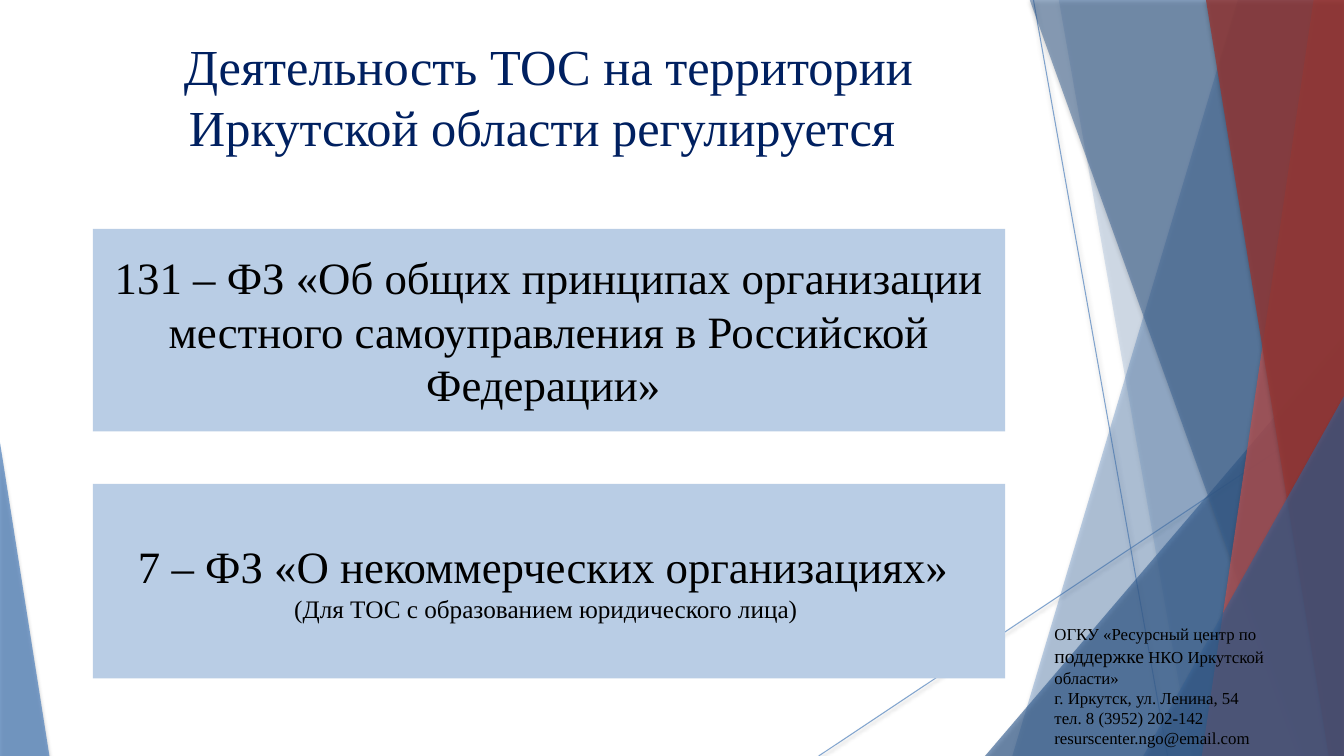
from dataclasses import dataclass

from lxml import etree
from pptx import Presentation
from pptx import util as u
from pptx.dml.color import RGBColor
from pptx.enum import shapes, text
from pptx.oxml import ns

PX = 9144  # EMU in one px, 100 px to the inch
WIDTH, HEIGHT = 1333, 750
TOP = -1


@dataclass(frozen=True)
class Theme:
    font: str = "Times New Roman"
    blue: str = "4F81BD"
    dark_blue: str = "376092"
    red: str = "C0504D"
    dark_red: str = "953735"
    panel: str = "B9CDE5"
    title: str = "002060"
    ink: str = "000000"
    title_size: int = 36
    law_size: int = 32
    note_size: int = 18
    accent_size: int = 14
    contact_size: int = 12


@dataclass(frozen=True)
class Shadow:
    blur: float
    distance: float
    alpha: int


@dataclass(frozen=True)
class Ray:
    start: tuple[int, int]
    end: tuple[int, int]


@dataclass(frozen=True)
class Facet:
    """A band from the top edge (or its right corner) down to the bottom edge."""
    top_left: int
    bottom_left: int
    color: str
    alpha: int


@dataclass(frozen=True)
class Corner:
    """A right triangle standing in a bottom corner; apex is 0 (left) or 1 (right)."""
    left: int
    top: int
    width: int
    apex: int
    color: str
    alpha: int


@dataclass(frozen=True)
class Run:
    text: str
    size: int


@dataclass(frozen=True)
class Panel:
    top: int
    height: int
    lines: list[list[Run]]


T = Theme()
RAY_SHADOW = Shadow(3.1, 1.6, 38)
FACET_SHADOW = Shadow(3, 2, 35)
RAYS = [Ray((1025, 0), (1158, 750)), Ray((1333, 403), (812, 750))]
FACETS = [
    Facet(1228, 1004, T.blue, 36),
    Facet(1050, 1182, T.blue, 20),
    Corner(977, 333, 356, 1, T.dark_blue, 66),
    Facet(1021, 1291, T.dark_blue, 50),
    Facet(1303, 1192, T.red, 70),
    Facet(1196, 1318, T.dark_red, 80),
    Corner(1134, 393, 199, 1, T.dark_blue, 66),
    Corner(0, 439, 49, 0, T.blue, 70),
]
TITLE = [[Run("Деятельность ТОС на территории Иркутской области регулируется ", T.title_size)]]
PANELS = [
    Panel(227, 201, [[Run("131 – ФЗ «Об общих принципах организации местного "
                          "самоуправления в Российской Федерации» ", T.law_size)]]),
    Panel(480, 193, [[Run("7 – ФЗ «О некоммерческих организациях» ", T.law_size)],
                     [Run("(Для ТОС с образованием юридического лица) ", T.note_size)]]),
]
CONTACTS = [
    [Run("ОГКУ «Ресурсный центр по ", T.contact_size),
     Run("поддержке", T.accent_size),
     Run(" НКО Иркутской области»", T.contact_size)],
    [Run("г. Иркутск, ул. Ленина, 54", T.contact_size)],
    [Run("тел. 8 (3952) 202-142", T.contact_size)],
    [Run("resurscenter.ngo@email.com", T.contact_size)],
]


def px(*values: int) -> list[int]:
    return [v * PX for v in values]


def set_effects(sp, alpha: int, shadow: Shadow) -> None:
    """Make the colours already set translucent, then add a shadow cast downwards."""
    props = sp._element.spPr
    for color in props.iter(ns.qn("a:srgbClr")):
        etree.SubElement(color, ns.qn("a:alpha"), val=str(alpha * 1000))
    effects = props.find(ns.qn("a:effectLst"))
    if effects is None:
        effects = etree.SubElement(props, ns.qn("a:effectLst"))
    outer = etree.SubElement(
        effects, ns.qn("a:outerShdw"), blurRad=str(int(u.Pt(shadow.blur))),
        dist=str(int(u.Pt(shadow.distance))), dir="5400000", rotWithShape="0")
    color = etree.SubElement(outer, ns.qn("a:srgbClr"), val=T.ink)
    etree.SubElement(color, ns.qn("a:alpha"), val=str(shadow.alpha * 1000))


def set_fill(sp, color: str) -> None:
    sp.shadow.inherit = False
    sp.fill.solid()
    sp.fill.fore_color.rgb = RGBColor.from_string(color)
    sp.line.fill.background()


def write(sp, lines: list[list[Run]], *, color: str = T.ink,
          align=text.PP_ALIGN.CENTER, anchor=text.MSO_ANCHOR.TOP) -> None:
    tf = sp.text_frame
    tf.word_wrap = True
    tf.auto_size = text.MSO_AUTO_SIZE.NONE
    tf.vertical_anchor = anchor
    for i, line in enumerate(lines):
        p = tf.add_paragraph() if i else tf.paragraphs[0]
        p.alignment = align
        for run in line:
            r = p.add_run()
            r.text = run.text
            r.font.name = T.font
            r.font.size = u.Pt(run.size)
            r.font.color.rgb = RGBColor.from_string(color)


def draw_ray(s, ray: Ray) -> None:
    line = s.shapes.add_connector(shapes.MSO_CONNECTOR.STRAIGHT, *px(*ray.start, *ray.end))
    line.line.color.rgb = RGBColor.from_string(T.blue)
    line.line.width = u.Pt(0.75)
    set_effects(line, 70, RAY_SHADOW)


def draw_facet(s, facet: Facet | Corner) -> None:
    if isinstance(facet, Corner):
        sp = s.shapes.add_shape(
            shapes.MSO_SHAPE.ISOSCELES_TRIANGLE,
            *px(facet.left, facet.top, facet.width, HEIGHT - facet.top))
        sp.adjustments[0] = facet.apex
    else:
        outline = s.shapes.build_freeform(facet.top_left, TOP, scale=PX)
        outline.add_line_segments(
            [(WIDTH, TOP), (WIDTH, HEIGHT), (facet.bottom_left, HEIGHT)], close=True)
        sp = outline.convert_to_shape()
    set_fill(sp, facet.color)
    set_effects(sp, facet.alpha, FACET_SHADOW)


def draw_panel(s, panel: Panel) -> None:
    sp = s.shapes.add_shape(shapes.MSO_SHAPE.RECTANGLE, *px(92, panel.top, 905, panel.height))
    set_fill(sp, T.panel)
    write(sp, panel.lines, anchor=text.MSO_ANCHOR.MIDDLE)


def main() -> None:
    prs = Presentation()
    prs.slide_width, prs.slide_height = px(WIDTH, HEIGHT)
    s = prs.slides.add_slide(prs.slide_layouts.get_by_name("Title Only"))
    for ray in RAYS:
        draw_ray(s, ray)
    for facet in FACETS:
        draw_facet(s, facet)
    title = s.shapes.title
    title.left, title.top, title.width, title.height = px(74, 30, 940, 144)
    write(title, TITLE, color=T.title)
    for panel in PANELS:
        draw_panel(s, panel)
    contacts = s.shapes.add_textbox(*px(1036, 614, 294, 163))
    write(contacts, CONTACTS, align=text.PP_ALIGN.LEFT)
    prs.save("out.pptx")


if __name__ == "__main__":
    main()
